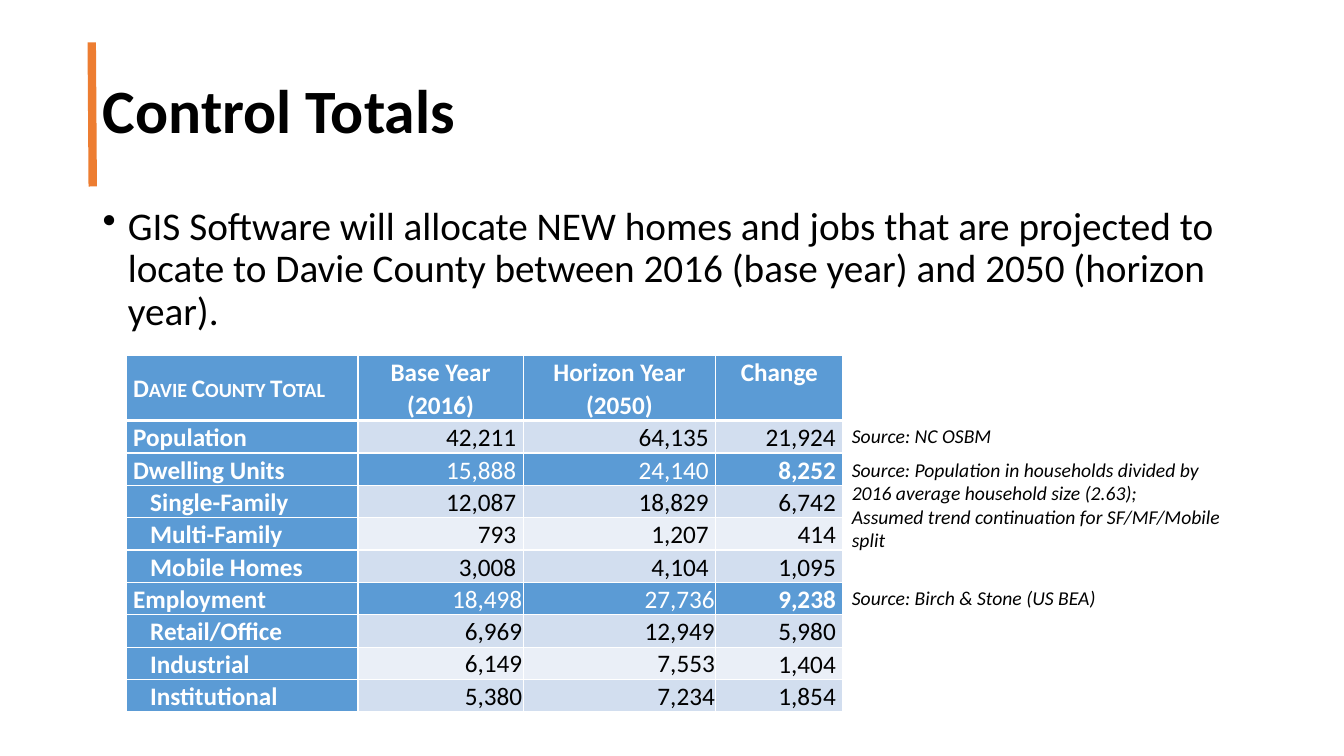
from lxml import etree
from pptx import Presentation
from pptx.dml.color import RGBColor
from pptx.enum.shapes import MSO_CONNECTOR as CONN
from pptx.enum.text import MSO_ANCHOR as ANC, PP_ALIGN as AL
from pptx.oxml.ns import qn
from pptx.util import Emu, Pt

PX = 9144
BLUE, WHITE, BLACK, ORANGE = "5B9BD5", "FFFFFF", "000000", "ED7D31"
BANDS = ("D2DEEF", "EAEFF7")

COLUMNS = (230, 164, 191, 126)
HEADER = ("Davie County Total", "Base Year\n(2016)", "Horizon Year\n(2050)", "Change")
GROUPS = [
    [("Population", "42,211", "64,135", "21,924")],
    [("Dwelling Units", "15,888", "24,140", "8,252"),
     ("Single-Family", "12,087", "18,829", "6,742"),
     ("Multi-Family", "793", "1,207", "414"),
     ("Mobile Homes", "3,008", "4,104", "1,095")],
    [("Employment", "18,498", "27,736", "9,238"),
     ("Retail/Office", "6,969", "12,949", "5,980"),
     ("Industrial", "6,149", "7,553", "1,404"),
     ("Institutional", "5,380", "7,234", "1,854")],
]
# top offset from the notes box, width, text
NOTES = [
    (0, 238, "Source: NC OSBM"),
    (33, 406, "Source: Population in households divided by 2016 average household "
              "size (2.63);\nAssumed trend continuation for SF/MF/Mobile split"),
    (160, 282, "Source: Birch & Stone (US BEA)"),
]


def px(n):
    return Emu(n * PX)


def rgb(color):
    return RGBColor.from_string(color)


def write(tf, text, color=BLACK, para=None, **font):
    """Fill a text frame, one paragraph per line of text."""
    for i, line in enumerate(text.split("\n")):
        p = tf.paragraphs[0] if i == 0 else tf.add_paragraph()
        for key, value in (para or {}).items():
            setattr(p, key, value)
        r = p.add_run()
        r.text = line
        r.font.color.rgb = rgb(color)
        for key, value in {"name": "Calibri", **font}.items():
            setattr(r.font, key, value)


def add_text(s, x, y, w, h, text, **kw):
    tf = s.shapes.add_textbox(*map(px, (x, y, w, h))).text_frame
    tf.word_wrap = True
    write(tf, text, **kw)
    return tf


def add_title(s, x, y, w, h, text):
    title = s.shapes.title
    title.left, title.top, title.width, title.height = map(px, (x, y, w, h))
    title.text_frame.vertical_anchor = ANC.MIDDLE
    write(title.text_frame, text, size=Pt(44), bold=True,
          para={"alignment": AL.LEFT, "line_spacing": 0.9})
    rule = s.shapes.add_connector(CONN.STRAIGHT, *map(px, (x - 1, y + 2, x, y + h)))
    rule.line.color.rgb = rgb(ORANGE)
    rule.line.width = Pt(6)
    etree.SubElement(rule._element.spPr, qn("a:effectLst"))


def add_bullet(s, x, y, w, h, text):
    tf = add_text(s, x, y, w, h, text, size=Pt(28),
                  para={"line_spacing": 0.9, "space_before": Pt(10)})
    pPr = tf.paragraphs[0]._p.get_or_add_pPr()
    pPr.set("marL", str(px(25)))
    pPr.set("indent", str(-px(25)))
    etree.SubElement(pPr, qn("a:buChar"), char="•")


def set_borders(cell, top=1, bottom=1):
    tcPr = cell._tc.get_or_add_tcPr()
    for side, width in {"L": 1, "R": 1, "T": top, "B": bottom}.items():
        ln = etree.SubElement(tcPr, qn(f"a:ln{side}"), w=str(Pt(width)))
        fill = etree.SubElement(ln, qn("a:solidFill"))
        etree.SubElement(fill, qn("a:srgbClr"), val=WHITE)


def fill_cell(cell, text, fill, color=WHITE, align=AL.LEFT, bold=False,
              anchor=ANC.MIDDLE, left=7, right=7, spacing=1.07, **borders):
    set_borders(cell, **borders)
    cell.fill.solid()
    cell.fill.fore_color.rgb = rgb(fill)
    cell.vertical_anchor = anchor
    cell.margin_left, cell.margin_right = px(left), px(right)
    cell.margin_top = cell.margin_bottom = 0
    write(cell.text_frame, text, color, size=Pt(18), bold=bold,
          para={"alignment": align, "line_spacing": spacing})


def add_totals(s, x, y, w, h):
    rows = [(row, g, i) for g, group in enumerate(GROUPS) for i, row in enumerate(group)]
    table = s.shapes.add_table(len(rows) + 1, len(COLUMNS), *map(px, (x, y, w, h))).table
    table.first_row = table.horz_banding = False
    for column, width in zip(table.columns, COLUMNS):
        column.width = px(width)
    for n, row in enumerate(table.rows):
        row.height = px(32 if n else 64)

    for c, text in enumerate(HEADER):
        fill_cell(table.cell(0, c), text, BLUE, bold=True, bottom=3,
                  align=AL.CENTER if c else AL.LEFT,
                  anchor=ANC.TOP if c else ANC.MIDDLE)
    label = table.cell(0, 0).text_frame.paragraphs[0].runs[0]
    label.font._element.set("cap", "small")

    for n, (row, g, i) in enumerate(rows, 1):
        top = 3 if n == 1 else 1
        subtotal = g > 0 and i == 0
        fill = BLUE if subtotal else BANDS[(n - 1) % 2]
        fill_cell(table.cell(n, 0), row[0], BLUE, bold=True, left=24 if i else 7, top=top)
        for c, value in enumerate(row[1:], 1):
            tight = {"anchor": ANC.BOTTOM, "left": 1, "right": 1, "spacing": 1.0}
            fill_cell(table.cell(n, c), value, fill, WHITE if subtotal else BLACK,
                      AL.RIGHT, bold=subtotal and c == 3, top=top,
                      **(tight if g == 2 and c < 3 else {}))


def add_notes(s, x, y):
    for offset, width, text in NOTES:
        height = 104 if "\n" in text else 34
        add_text(s, x, y + offset, width, height, text, size=Pt(14), italic=True)


def main():
    prs = Presentation()
    prs.slide_width, prs.slide_height = px(1333), px(750)
    s = prs.slides.add_slide(prs.slide_layouts[5])
    add_title(s, 92, 40, 1150, 145, "Control Totals")
    add_bullet(s, 92, 200, 1150, 161,
               "GIS Software will allocate NEW homes and jobs that are projected to locate "
               "to Davie County between 2016 (base year) and 2050 (horizon year).")
    add_totals(s, 125, 353, sum(COLUMNS), 352)
    add_notes(s, 835, 416)
    prs.save("out.pptx")


if __name__ == "__main__":
    main()
